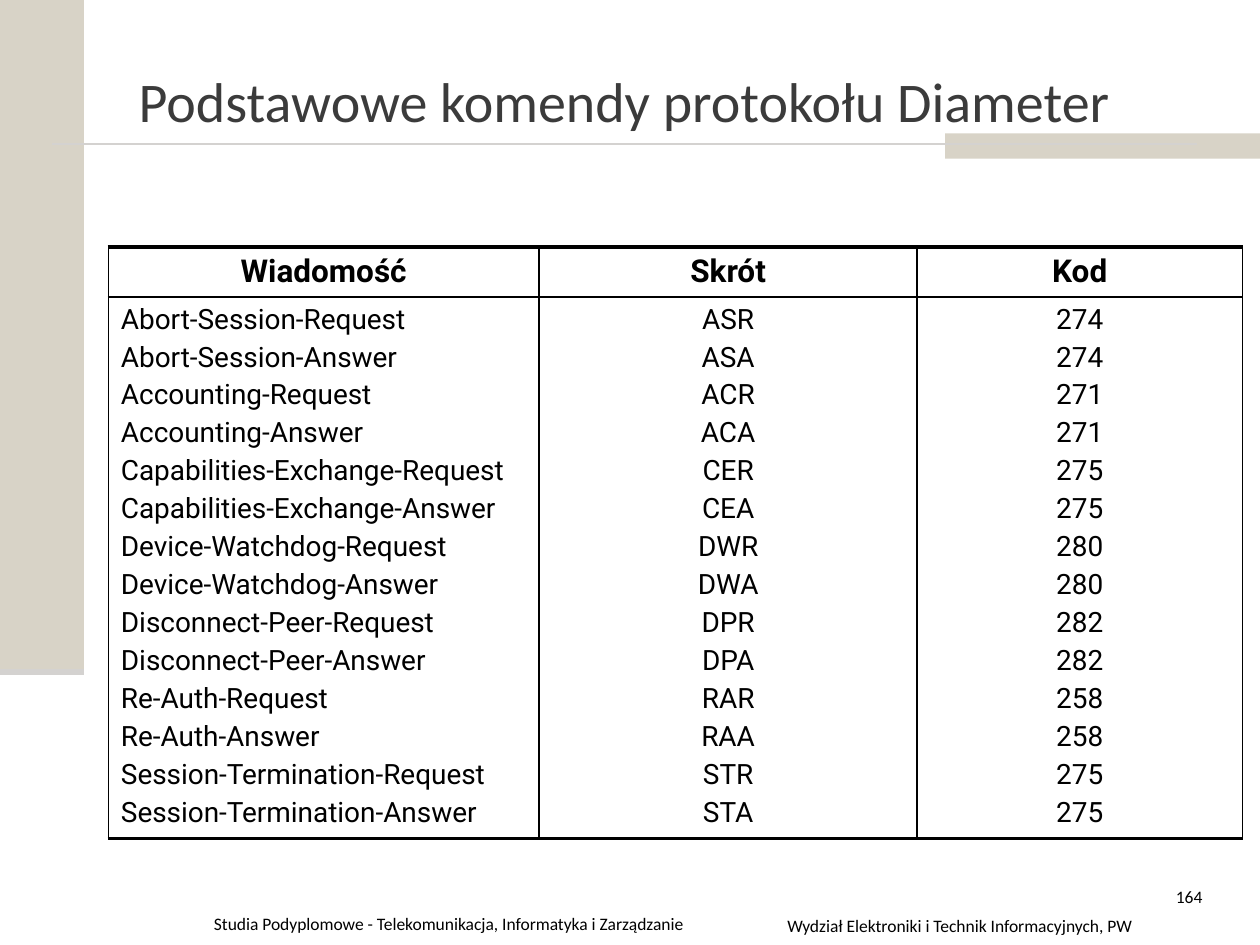
from lxml.etree import SubElement
from pptx import Presentation
from pptx.dml.color import RGBColor
from pptx.enum.shapes import MSO_CONNECTOR, MSO_SHAPE
from pptx.enum.text import MSO_ANCHOR, PP_ALIGN
from pptx.oxml import parse_xml
from pptx.oxml.ns import nsdecls, qn
from pptx.util import Pt

TITLE = "Podstawowe komendy protokołu Diameter"
HEADERS = ["Wiadomość", "Skrót", "Kod"]
COMMANDS = [
    ("Abort-Session-Request", "ASR", "274"),
    ("Abort-Session-Answer", "ASA", "274"),
    ("Accounting-Request", "ACR", "271"),
    ("Accounting-Answer", "ACA", "271"),
    ("Capabilities-Exchange-Request", "CER", "275"),
    ("Capabilities-Exchange-Answer", "CEA", "275"),
    ("Device-Watchdog-Request", "DWR", "280"),
    ("Device-Watchdog-Answer", "DWA", "280"),
    ("Disconnect-Peer-Request", "DPR", "282"),
    ("Disconnect-Peer-Answer", "DPA", "282"),
    ("Re-Auth-Request", "RAR", "258"),
    ("Re-Auth-Answer", "RAA", "258"),
    ("Session-Termination-Request", "STR", "275"),
    ("Session-Termination-Answer", "STA", "275"),
]
FOOTERS = [
    ("Wydział Elektroniki i Technik Informacyjnych, PW", (431.3, 519.1, 234, 19.4), PP_ALIGN.CENTER),
    ("164", (659.5, 502.6, 34.6, 36), PP_ALIGN.RIGHT),
    ("Studia Podyplomowe - Telekomunikacja, Informatyka i Zarządzanie", (115.2, 518.4, 321.1, 20.2), PP_ALIGN.LEFT),
]
COLORS = {"band": "D8D3C7", "rule": "D4D2D0", "title": "3B3B3B", "text": "000000"}
BANDS = [(0, 0, 48, 384), (540, 76.3, 181.4, 14.4)]
RULES = [((30, 82.3, 684, 82.3), 1.5), ((0, 384, 48, 384), 3.5)]
TITLE_BOX = (72, 20.2, 612, 74.2)
TABLE_ORIGIN = (61.9, 141.1)
COLUMN_WIDTHS = [246.2, 216, 185.8]
ROW_HEIGHTS = [28.6, 309.6]
OUTER_LINE, INNER_LINE = 2.25, 1
FORMATS = {
    "title": {"name": "Calibri", "size": Pt(32), "bold": False},
    "footer": {"name": "Calibri", "size": Pt(10)},
    "header": {"name": "Roboto", "size": Pt(18), "bold": True},
    "body": {"name": "Roboto", "size": Pt(16), "bold": False},
}


def color(key):
    """Return the named colour."""
    return RGBColor.from_string(COLORS[key])


def points(values):
    """Convert numbers to point lengths."""
    return [Pt(value) for value in values]


def write(frame, lines, style, alignment, color_key="text", space=0):
    """Fill a text frame with one formatted paragraph per line."""
    frame.word_wrap = True
    for index, line in enumerate(lines):
        paragraph = frame.add_paragraph() if index else frame.paragraphs[0]
        paragraph.alignment = alignment
        paragraph.space_before = Pt(space if index else 0)
        run = paragraph.add_run()
        run.text = line
        for name, value in FORMATS[style].items():
            setattr(run.font, name, value)
        run.font.color.rgb = color(color_key)


def set_borders(cell, widths):
    """Draw the left, right, top and bottom borders of a cell."""
    properties = cell._tc.get_or_add_tcPr()
    for index, (tag, width) in enumerate(zip(("lnL", "lnR", "lnT", "lnB"), widths)):
        properties.insert(index, parse_xml(
            f'<a:{tag} {nsdecls("a")} w="{Pt(width)}"><a:solidFill>'
            f'<a:srgbClr val="{COLORS["text"]}"/></a:solidFill></a:{tag}>'))


def add_decoration(slide):
    """Add the bands and rules."""
    for box in BANDS:
        band = slide.shapes.add_shape(MSO_SHAPE.RECTANGLE, *points(box))
        band.shadow.inherit = False
        band.fill.solid()
        band.fill.fore_color.rgb = color("band")
        band.line.fill.background()
    for ends, width in RULES:
        rule = slide.shapes.add_connector(MSO_CONNECTOR.STRAIGHT, *points(ends))
        rule.line.color.rgb = color("rule")
        rule.line.width = Pt(width)
        SubElement(rule._element.spPr, qn("a:effectLst"))


def add_command_table(slide):
    """Add the table of commands."""
    size = (sum(COLUMN_WIDTHS), sum(ROW_HEIGHTS))
    table = slide.shapes.add_table(2, len(HEADERS), *points(TABLE_ORIGIN + size)).table
    table.first_row = table.horz_banding = False
    for row, height in zip(table.rows, ROW_HEIGHTS):
        row.height = Pt(height)
    for index, (header, entries) in enumerate(zip(HEADERS, zip(*COMMANDS))):
        table.columns[index].width = Pt(COLUMN_WIDTHS[index])
        body_alignment = PP_ALIGN.CENTER if index else PP_ALIGN.LEFT
        head, body = table.cell(0, index), table.cell(1, index)
        write(head.text_frame, [header], "header", PP_ALIGN.CENTER)
        write(body.text_frame, entries, "body", body_alignment, space=3.1)
        for cell, top, bottom in ((head, OUTER_LINE, INNER_LINE), (body, INNER_LINE, OUTER_LINE)):
            cell.fill.background()
            set_borders(cell, (INNER_LINE, INNER_LINE, top, bottom))


def main():
    """Build and save the slide."""
    presentation = Presentation()
    presentation.slide_width, presentation.slide_height = Pt(720), Pt(540)
    slide = presentation.slides.add_slide(presentation.slide_layouts[5])
    add_decoration(slide)
    title = slide.shapes.title
    title.left, title.top, title.width, title.height = points(TITLE_BOX)
    title.text_frame.vertical_anchor = MSO_ANCHOR.MIDDLE
    write(title.text_frame, [TITLE], "title", PP_ALIGN.LEFT, "title")
    add_command_table(slide)
    for text, box, alignment in FOOTERS:
        footer = slide.shapes.add_textbox(*points(box))
        write(footer.text_frame, [text], "footer", alignment)
    presentation.save("out.pptx")


if __name__ == "__main__":
    main()
